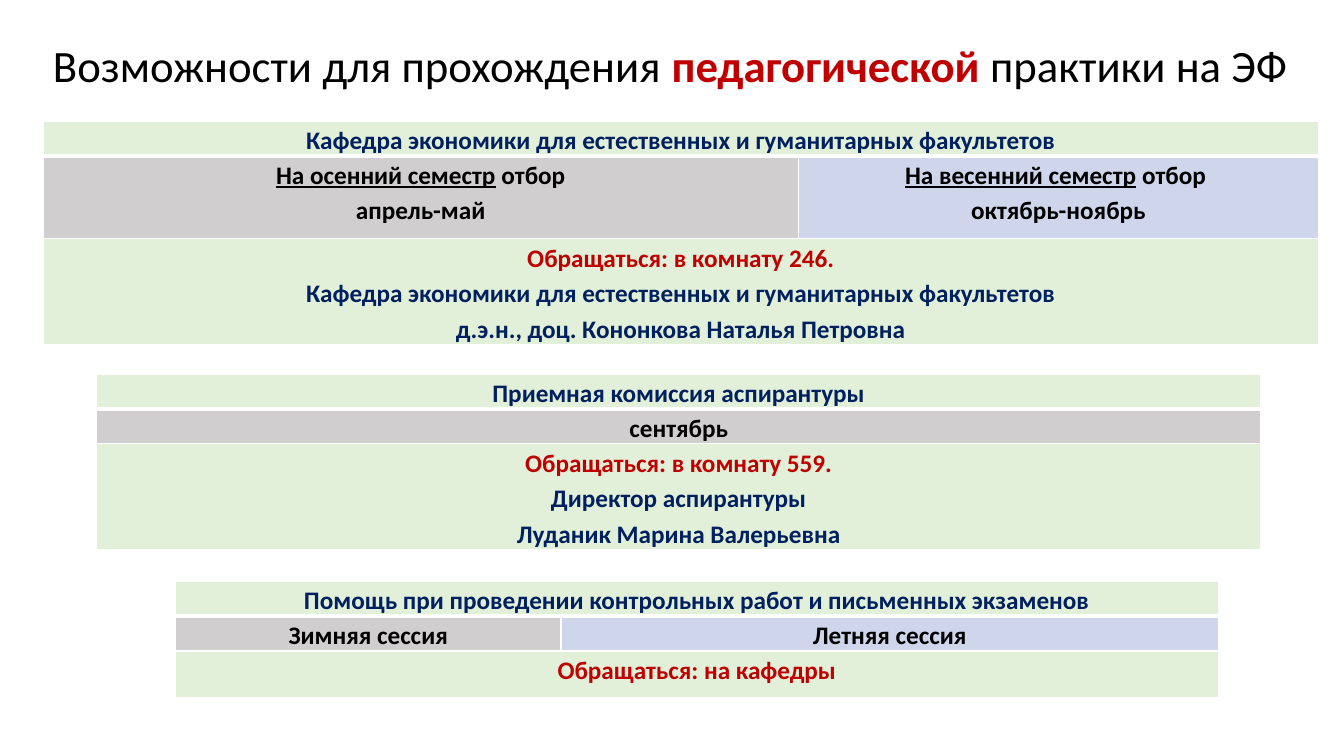
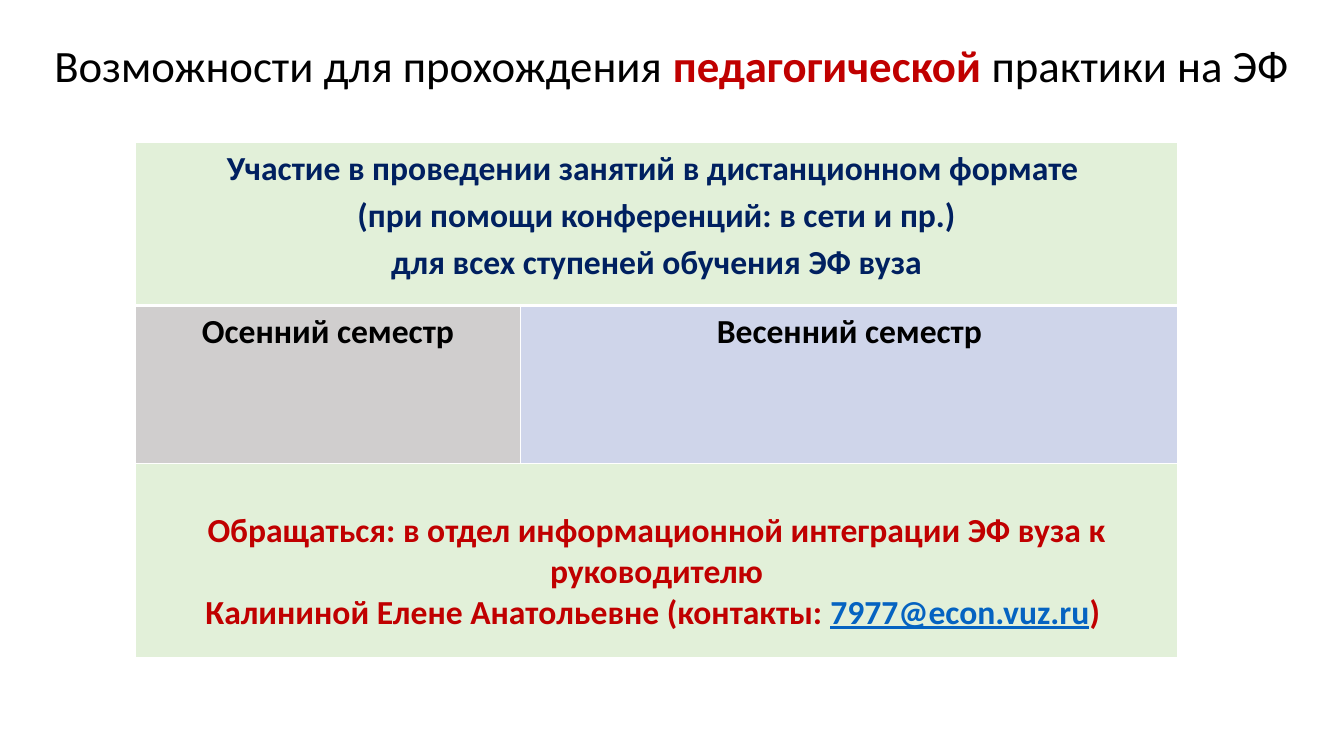
from dataclasses import dataclass

from lxml.etree import SubElement, Element
from pptx import Presentation
from pptx.dml.color import RGBColor as Color
from pptx.enum.text import MSO_ANCHOR as Anchor, PP_ALIGN as Align
from pptx.oxml.ns import qn
from pptx.util import Emu, Inches, Pt


@dataclass(frozen=True)
class Theme:
    font: str = "Calibri"
    title_size: int = 32
    text_size: int = 18
    large_size: int = 24
    ink: str = "000000"
    navy: str = "002060"
    red: str = "C00000"
    link: str = "0563C1"
    white: str = "FFFFFF"
    green: str = "E2F0D9"
    grey: str = "D0CECE"
    blue: str = "CFD5EA"
    line_spacing: float = 1.15
    title_spacing: float = 0.9
    rule: int = 1
    heavy_rule: int = 3


THEME = Theme()
WIDTH, HEIGHT = Inches(13.333), Inches(7.5)


@dataclass(frozen=True)
class Span:
    text: str
    color: str = THEME.ink
    bold: bool = True
    underline: bool = False


Para = tuple[Span, ...]


@dataclass(frozen=True)
class Notice:
    """A table: heading, one cell per term, contacts; lengths in % of the slide."""
    left: float
    top: float
    columns: tuple[float, ...]
    rows: tuple[float, float, float]
    heading: tuple[Para, ...]
    terms: tuple[tuple[Para, ...], ...]
    contacts: tuple[Para, ...]
    size: int = THEME.text_size
    contact_spacing: float = THEME.line_spacing
    contact_inset: float = 0


@dataclass(frozen=True)
class Page:
    title_left: float
    title_top: float
    notices: tuple[Notice, ...]


def across(percent: float) -> Emu:
    return Emu(round(WIDTH * percent / 100))


def down(percent: float) -> Emu:
    return Emu(round(HEIGHT * percent / 100))


def lines(color: str, *texts: str) -> tuple[Para, ...]:
    return tuple((Span(text, color),) for text in texts)


def semester(name: str, rest: str, months: str) -> tuple[Para, ...]:
    return ((Span(name, underline=True), Span(rest)), (Span(months),))


# Content
TITLE: Para = (
    Span("Возможности для прохождения ", bold=False),
    Span("педагогической ", THEME.red),
    Span("практики на ЭФ", bold=False),
)
DEPARTMENT = "Кафедра экономики для естественных и гуманитарных факультетов"
SESSION_COLUMNS = (28.7, 48.9)

PAGES = (
    Page(3.2, 1.9, (
        Notice(
            3.2, 16, (56.2, 38.7), (4.6, 11, 14),
            lines(THEME.navy, DEPARTMENT),
            (semester("На осенний семестр", " отбор", "апрель-май"),
             semester("На весенний семестр", " отбор ", "октябрь-ноябрь")),
            lines(THEME.red, "Обращаться: в комнату 246.")
            + lines(THEME.navy, DEPARTMENT, "д.э.н., доц. Кононкова Наталья Петровна"),
        ),
        Notice(
            7.2, 49.5, (86.6,), (4.6, 4.6, 14),
            lines(THEME.navy, "Приемная комиссия аспирантуры"),
            (lines(THEME.ink, "сентябрь"),),
            lines(THEME.red, "Обращаться: в комнату 559.")
            + lines(THEME.navy, "Директор аспирантуры", "Луданик Марина Валерьевна"),
        ),
        Notice(
            13.05, 76.9, SESSION_COLUMNS, (4.6, 4.6, 6.2),
            lines(THEME.navy, "Помощь при проведении контрольных работ и письменных экзаменов"),
            (lines(THEME.ink, "Зимняя сессия"), lines(THEME.ink, "Летняя сессия")),
            lines(THEME.red, "Обращаться: на кафедры"),
        ),
    )),
    Page(3.3, 2, (
        Notice(
            10.05, 18.8, SESSION_COLUMNS, (21.6, 20.9, 25.7),
            lines(THEME.navy, "Участие в проведении занятий в дистанционном формате ",
                  "(при помощи конференций: в сети и пр.)",
                  "для всех ступеней обучения ЭФ вуза"),
            (lines(THEME.ink, "Осенний семестр"), lines(THEME.ink, "Весенний семестр")),
            lines(THEME.red, "Обращаться: в отдел информационной интеграции ЭФ вуза к руководителю")
            + ((Span("Калининой Елене Анатольевне (контакты: ", THEME.red),
                Span("7977@econ.vuz.ru", THEME.link, underline=True),
                Span(") ", THEME.red)),),
            THEME.large_size, contact_spacing=1.0, contact_inset=6.2,
        ),
    )),
)


# Drawing
def write(frame, paras: tuple[Para, ...], size: int, spacing: float, align: Align) -> None:
    for index, spans in enumerate(paras):
        para = frame.paragraphs[0] if index == 0 else frame.add_paragraph()
        para.alignment, para.line_spacing = align, spacing
        for span in spans:
            run = para.add_run()
            run.text = span.text
            run.font.color.rgb = Color.from_string(span.color)
            style = {"name": THEME.font, "size": Pt(size),
                     "bold": span.bold, "underline": span.underline}
            for name, value in style.items():
                setattr(run.font, name, value)


def set_borders(cell, row: int) -> None:
    heavy = {0: "lnB", 1: "lnT"}.get(row)
    properties = cell._tc.get_or_add_tcPr()
    for index, side in enumerate(("lnL", "lnR", "lnT", "lnB")):
        weight = THEME.heavy_rule if side == heavy else THEME.rule
        line = Element(qn(f"a:{side}"), w=str(Pt(weight)))
        fill = SubElement(line, qn("a:solidFill"))
        SubElement(fill, qn("a:srgbClr"), val=THEME.white)
        properties.insert(index, line)


def fill_cell(cell, paras: tuple[Para, ...], fill: str, size: int,
              spacing: float = THEME.line_spacing, inset: float = 0) -> None:
    margins = {"margin_left": Inches(0.07), "margin_right": Inches(0.07),
               "margin_top": down(inset), "margin_bottom": 0}
    for name, value in margins.items():
        setattr(cell, name, value)
    cell.fill.solid()
    cell.fill.fore_color.rgb = Color.from_string(fill)
    write(cell.text_frame, paras, size, spacing, Align.CENTER)


def add_notice(slide, notice: Notice) -> None:
    count = len(notice.columns)
    table = slide.shapes.add_table(
        len(notice.rows), count, across(notice.left), down(notice.top),
        across(sum(notice.columns)), down(sum(notice.rows))).table
    table.first_row = table.horz_banding = False
    for column, width in zip(table.columns, notice.columns):
        column.width = across(width)
    for row, height in zip(table.rows, notice.rows):
        row.height = down(height)

    # Heading and contacts run across the full width
    if count > 1:
        for row in (0, 2):
            table.cell(row, 0).merge(table.cell(row, count - 1))
    fill_cell(table.cell(0, 0), notice.heading, THEME.green, notice.size)
    for column, (term, fill) in enumerate(zip(notice.terms, (THEME.grey, THEME.blue))):
        fill_cell(table.cell(1, column), term, fill, notice.size)
    fill_cell(table.cell(2, 0), notice.contacts, THEME.green, notice.size,
              notice.contact_spacing, notice.contact_inset)
    for row in range(len(notice.rows)):
        for column in range(count):
            set_borders(table.cell(row, column), row)


def add_title(slide, page: Page) -> None:
    box = slide.shapes.add_textbox(
        across(page.title_left), down(page.title_top), across(94.9), down(14.1))
    frame = box.text_frame
    frame.word_wrap = True
    frame.vertical_anchor = Anchor.MIDDLE
    write(frame, (TITLE,), THEME.title_size, THEME.title_spacing, Align.LEFT)


def main() -> None:
    deck = Presentation()
    deck.slide_width, deck.slide_height = WIDTH, HEIGHT
    for page in PAGES:
        slide = deck.slides.add_slide(deck.slide_layouts[6])
        add_title(slide, page)
        for notice in page.notices:
            add_notice(slide, notice)
    deck.save("out.pptx")


if __name__ == "__main__":
    main()
